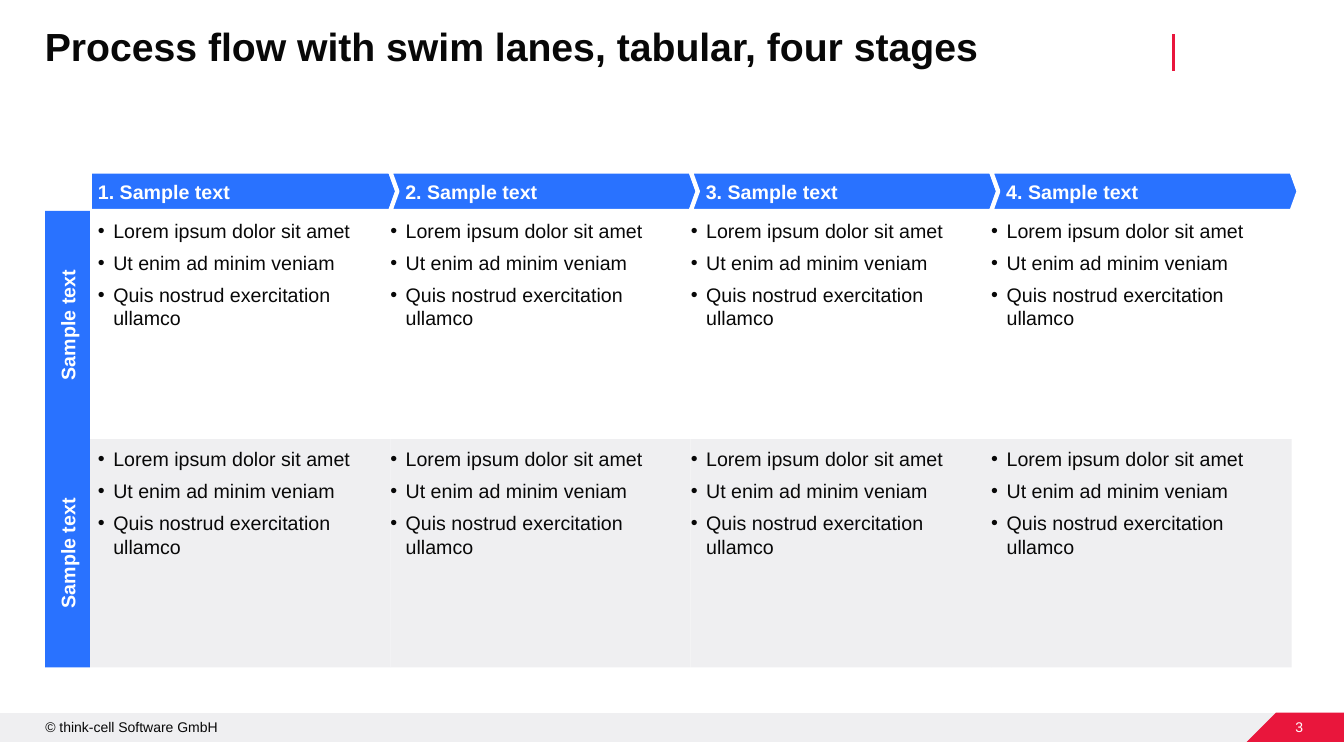
from lxml.etree import SubElement
from pptx import Presentation
from pptx.dml.color import RGBColor
from pptx.enum.shapes import MSO_CONNECTOR, MSO_SHAPE
from pptx.enum.text import MSO_ANCHOR, MSO_AUTO_SIZE, PP_ALIGN
from pptx.oxml.ns import qn
from pptx.util import Pt

COLORS = {"ink": "080808", "white": "FFFFFF", "blue": "2972FF",
          "grey": "EFEFF1", "red": "E9163C"}
TASKS = ["Lorem ipsum dolor sit amet", "Ut enim ad minim veniam",
         "Quis nostrud exercitation ullamco"]


def paint(shape, color):
    shape.shadow.inherit = False
    shape.fill.solid()
    shape.fill.fore_color.rgb = RGBColor.from_string(COLORS[color])
    shape.line.fill.background()


def write(shape, lines, size, color, bold=False, align=PP_ALIGN.LEFT,
          anchor=MSO_ANCHOR.TOP, insets=(0, 0, 0, 0), wrap=True, after=0, bullets=False):
    frame = shape.text_frame
    frame.auto_size = MSO_AUTO_SIZE.NONE
    frame.word_wrap = wrap
    frame.vertical_anchor = anchor
    frame.margin_left, frame.margin_top, frame.margin_right, frame.margin_bottom = map(Pt, insets)
    for index, line in enumerate(lines):
        paragraph = frame.add_paragraph() if index else frame.paragraphs[0]
        paragraph.alignment = align
        paragraph.space_before = Pt(0)
        paragraph.space_after = Pt(after)
        if bullets:
            properties = paragraph._p.get_or_add_pPr()
            properties.set("marL", str(Pt(11)))
            properties.set("indent", str(-Pt(11)))
            SubElement(properties, qn("a:buFont")).set("typeface", "Arial")
            SubElement(properties, qn("a:buChar")).set("char", "•")
        run = paragraph.add_run()
        run.text = line
        run.font.name = "Arial"
        run.font.size = Pt(size)
        run.font.bold = bold
        run.font.color.rgb = RGBColor.from_string(COLORS[color])


prs = Presentation()
prs.slide_width, prs.slide_height = Pt(960), Pt(540)
slide = prs.slides.add_slide(prs.slide_layouts[5])
shapes = slide.shapes

footer_outlines = [
    ("grey", [(0, 509), (960, 509), (960, 530), (0, 530)]),
    ("red", [(911.5, 509), (960, 509), (960, 530), (890.5, 530)]),
]
for color, corners in footer_outlines:
    points = [(Pt(x), Pt(y)) for x, y in corners]
    builder = shapes.build_freeform(*points[0], scale=1.0)
    builder.add_line_segments(points[1:], close=True)
    paint(builder.convert_to_shape(), color)

copyright_line = shapes.add_textbox(Pt(32.4), Pt(513.3), Pt(177), Pt(12.2))
write(copyright_line, ["© think-cell Software GmbH"], 10, "ink")
page_number = shapes.add_textbox(Pt(918.7), Pt(513.3), Pt(12.2), Pt(12.2))
write(page_number, ["3"], 10, "white", align=PP_ALIGN.RIGHT,
      anchor=MSO_ANCHOR.MIDDLE, wrap=False)

title_mark = shapes.add_connector(MSO_CONNECTOR.STRAIGHT, Pt(838), Pt(24.5), Pt(838), Pt(50.4))
title_mark.line.color.rgb = RGBColor.from_string(COLORS["red"])
title_mark.line.width = Pt(2.25)
SubElement(title_mark._element.spPr, qn("a:effectLst"))

title = shapes.title
title.left, title.top, title.width, title.height = Pt(32), Pt(20), Pt(794), Pt(30.2)
write(title, ["Process flow with swim lanes, tabular, four stages"], 28, "ink", bold=True)
title.text_frame.paragraphs[0].line_spacing = 0.9

grid_left, stage_width = 64.2, 214.6
lane_top, lane_height = 150.7, 163

for stage in range(4):
    outline = MSO_SHAPE.CHEVRON if stage else MSO_SHAPE.PENTAGON
    header = shapes.add_shape(outline, Pt(grid_left + stage * stage_width), Pt(122.6),
                              Pt(stage_width + 5), Pt(28.1))
    header.adjustments[0] = 0.18
    paint(header, "blue")
    header.line.color.rgb = RGBColor.from_string(COLORS["white"])
    header.line.width = Pt(3)
    write(header, [f"{stage + 1}. Sample text"], 14, "white", bold=True,
          anchor=MSO_ANCHOR.MIDDLE, insets=(5.7, 5.7, 0, 5.7), wrap=False)

for lane in range(2):
    top = lane_top + lane * lane_height
    for stage in range(4):
        box = (Pt(grid_left + stage * stage_width), Pt(top), Pt(stage_width), Pt(lane_height))
        if lane:
            cell = shapes.add_shape(MSO_SHAPE.RECTANGLE, *box)
            paint(cell, "grey")
        else:
            cell = shapes.add_textbox(*box)
        write(cell, TASKS, 14, "ink", insets=(0 if stage else 5.7, 5.7, 0, 78.5),
              after=6, bullets=True)
    lane_label = shapes.add_shape(MSO_SHAPE.RECTANGLE, Pt(32.2), Pt(top),
                                  Pt(grid_left - 32.2), Pt(lane_height))
    paint(lane_label, "blue")
    write(lane_label, ["Sample text"], 14, "white", bold=True, align=PP_ALIGN.CENTER,
          anchor=MSO_ANCHOR.MIDDLE, insets=(7.2, 0, 7.2, 0), wrap=False, after=6)
    lane_label.text_frame._txBody.bodyPr.set("vert", "vert270")

prs.save("out.pptx")
